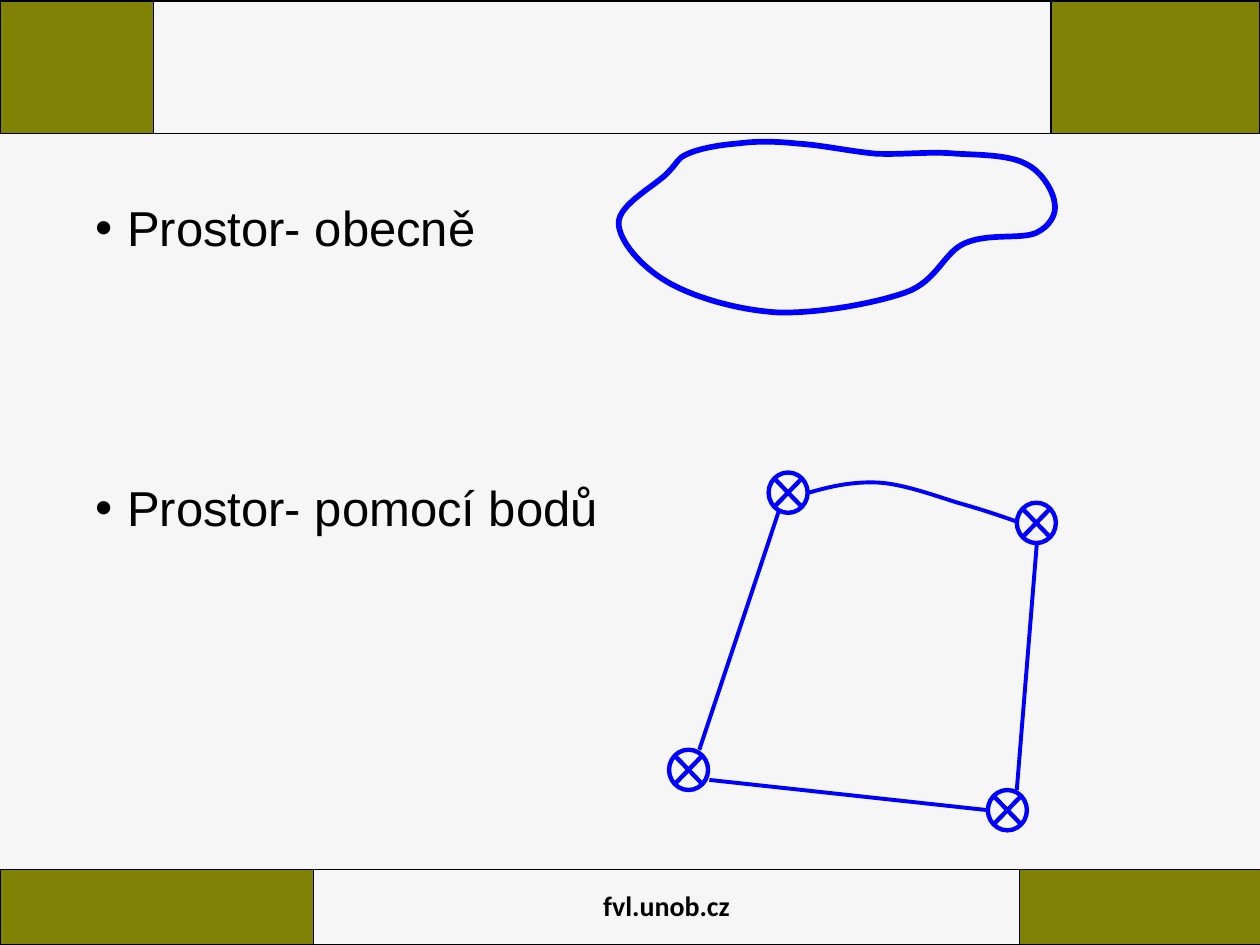
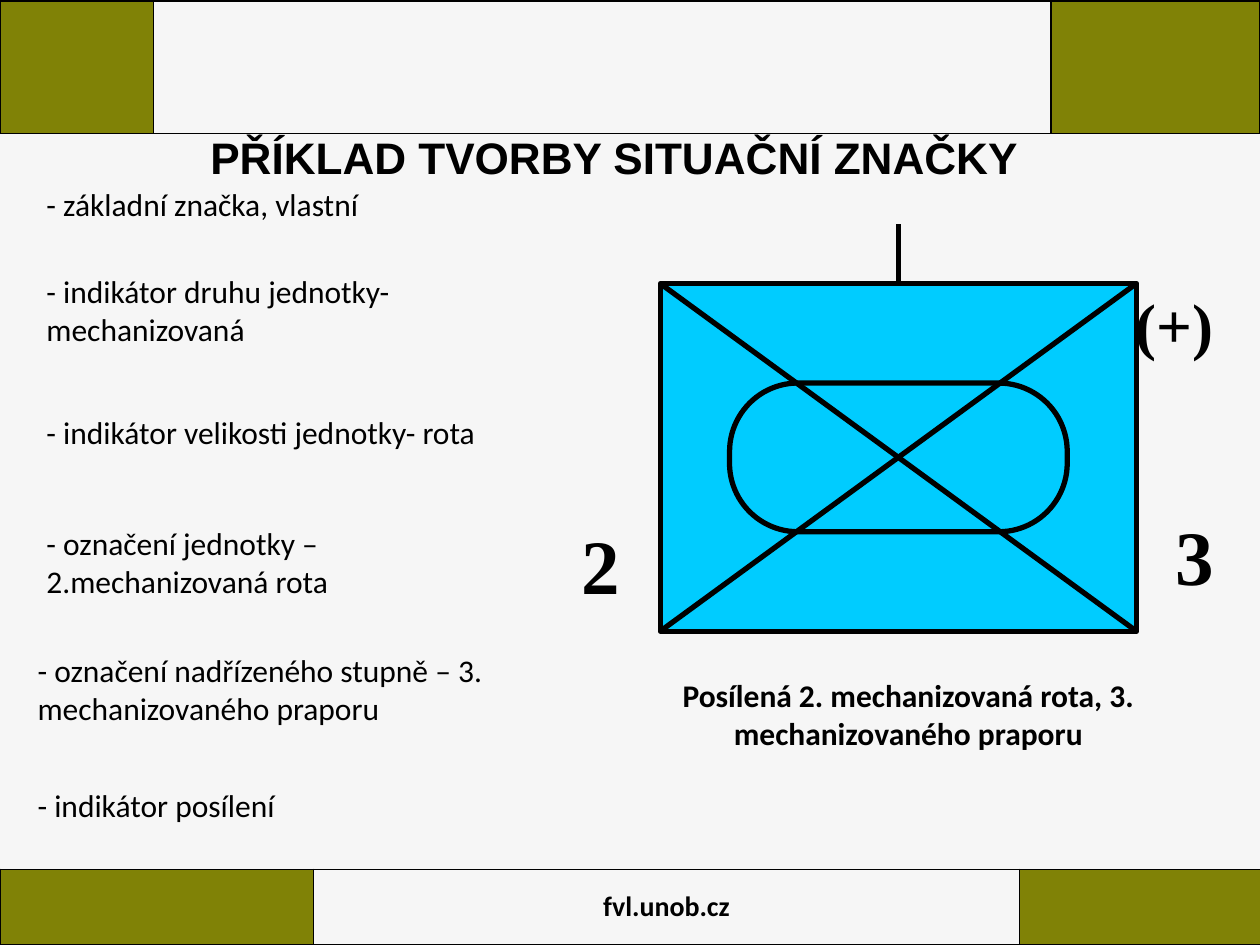
from lxml import etree
from pptx import Presentation
from pptx.dml.color import RGBColor
from pptx.enum.shapes import MSO_CONNECTOR, MSO_SHAPE
from pptx.enum.text import MSO_ANCHOR, MSO_AUTO_SIZE, PP_ALIGN
from pptx.oxml.ns import qn
from pptx.util import Pt

PX = 9144
STRAIGHT = MSO_CONNECTOR.STRAIGHT
RECT, ROUNDED = MSO_SHAPE.RECTANGLE, MSO_SHAPE.ROUNDED_RECTANGLE
JUNCTION = MSO_SHAPE.FLOWCHART_SUMMING_JUNCTION
LEFT, CENTER = PP_ALIGN.LEFT, PP_ALIGN.CENTER
MIDDLE = MSO_ANCHOR.MIDDLE
FIXED = MSO_AUTO_SIZE.NONE

PAPER, OLIVE, BLACK, BLUE, CYAN = "F6F6F6", "808206", "000000", "0000FF", "00CCFF"
SANS, BODY, SERIF = "Arial", "Calibri", "Times New Roman"

AREA = [
    (530, 137), (521, 147), (491, 162), (491, 177), (491, 191), (509, 212), (530, 224),
    (551, 236), (585, 246), (617, 248), (648, 249), (694, 241), (719, 232),
    (744, 223), (749, 200), (766, 193), (784, 185), (810, 190), (822, 185),
    (833, 180), (839, 170), (837, 161), (836, 152), (827, 136), (814, 130),
    (801, 123), (778, 123), (759, 122), (739, 120), (716, 123), (695, 122),
    (674, 120), (651, 115), (633, 114), (614, 112), (600, 112), (585, 114),
    (571, 115), (555, 118), (546, 122), (537, 126), (539, 128), (530, 137),
]
ARC = [
    (642, 391), (659, 386), (677, 382), (697, 383), (716, 384), (741, 393), (760, 399),
    (778, 404), (793, 409), (807, 414),
]
JUNCTIONS = [(610, 375), (807, 399), (531, 595), (784, 627)]
SIDES = [(555, 595, 618, 406), (807, 627, 823, 430), (563, 619, 784, 643)]
NOTES = [
    ("- základní značka, vlastní", (27, 142, 394, 90)),
    ("- indikátor druhu jednotky- mechanizovaná", (27, 211, 378, 130)),
    ("- indikátor velikosti jednotky- rota", (27, 323, 378, 90)),
    ("- označení jednotky – 2.mechanizovaná rota", (27, 411, 378, 90)),
    ("- označení nadřízeného stupně – 3. mechanizovaného praporu", (20, 512, 433, 130)),
    ("- indikátor posílení", (20, 619, 433, 50)),
]
AMPLIFIERS = [
    ("2", (445, 406, 63, 83), 44),
    ("3", (917, 399, 63, 83), 44),
    ("(+)", (889, 222, 87, 70), 36),
]


def emu(*lengths):
    return [n * PX for n in lengths]


def rgb(color):
    return RGBColor.from_string(color)


def set_font(p, size, name, bold=False):
    p.font.size, p.font.name, p.font.bold = Pt(size), name, bold
    p.font.color.rgb = rgb(BLACK)


def set_line(sp, color, width):
    sp.line.color.rgb = rgb(color)
    sp.line.width = Pt(width)


def place(sp, box):
    sp.left, sp.top, sp.width, sp.height = emu(*box)


def add_outline(shapes, kind, box, color, width, fill=None):
    sp = shapes.add_shape(kind, *emu(*box))
    sp.shadow.inherit = False
    if fill:
        sp.fill.solid()
        sp.fill.fore_color.rgb = rgb(fill)
    else:
        sp.fill.background()
    set_line(sp, color, width)
    return sp


def add_line(shapes, ends, color, width):
    line = shapes.add_connector(STRAIGHT, *emu(*ends))
    set_line(line, color, width)
    etree.SubElement(line._element.spPr, qn("a:effectLst"))


def add_curve(shapes, nodes, color, width):
    builder = shapes.build_freeform(*emu(*nodes[0]))
    builder.add_line_segments([emu(*node) for node in nodes[1:]],
                              close=nodes[0] == nodes[-1])
    sp = builder.convert_to_shape()
    segments = list(sp._element.iter(qn("a:lnTo")))
    for i in range(0, len(segments), 3):
        first, *others = segments[i:i + 3]
        curve = etree.Element(qn("a:cubicBezTo"))
        first.addprevious(curve)
        for segment in (first, *others):
            curve.append(segment[0])
            segment.getparent().remove(segment)
    sp.shadow.inherit = False
    sp.fill.background()
    set_line(sp, color, width)


def add_text(shapes, text, box, size, name, bold=False, align=LEFT):
    tf = shapes.add_textbox(*emu(*box)).text_frame
    tf.word_wrap = True
    p = tf.paragraphs[0]
    p.text, p.alignment = text, align
    set_font(p, size, name, bold)


def set_borders(cell):
    tc_pr = cell._tc.get_or_add_tcPr()
    for side in ("lnL", "lnR", "lnT", "lnB"):
        ln = etree.SubElement(tc_pr, qn(f"a:{side}"), w=str(Pt(1)))
        fill = etree.SubElement(ln, qn("a:solidFill"))
        etree.SubElement(fill, qn("a:srgbClr"), val=BLACK)


def add_band(shapes, top, height, widths, text=""):
    frame = shapes.add_table(1, len(widths), *emu(0, top, sum(widths), height))
    table = frame.table
    table.first_row = table.horz_banding = False
    for i, width in enumerate(widths):
        table.columns[i].width = width * PX
        cell = table.cell(0, i)
        set_borders(cell)
        if i == 1:
            cell.fill.background()
        else:
            cell.fill.solid()
            cell.fill.fore_color.rgb = rgb(OLIVE)
    if text:
        cell = table.cell(0, 1)
        cell.vertical_anchor = MIDDLE
        p = cell.text_frame.paragraphs[0]
        p.text, p.alignment = text, CENTER
        set_font(p, 16, BODY, True)
    return frame


def build_master(master, shapes):
    background = master.background.fill
    background.solid()
    background.fore_color.rgb = rgb(PAPER)
    bands = [
        add_band(shapes, 690, 60, (249, 560, 192), "fvl.unob.cz"),
        add_band(shapes, 1, 105, (122, 712, 166)),
    ]
    for number, frame in enumerate(bands, 20):
        frame._element.nvGraphicFramePr.cNvPr.set("id", str(number))
        master.shapes._spTree.append(frame._element)


def fill_bullets(sp, box, items, gap):
    place(sp, box)
    tf = sp.text_frame
    tf.auto_size = FIXED
    for i, item in enumerate(items):
        p = tf.add_paragraph() if i else tf.paragraphs[0]
        p.text = item
        p_pr = p._p.get_or_add_pPr()
        p_pr.set("marL", str(25 * PX))
        p_pr.set("indent", str(-25 * PX))
        p.line_spacing = 0.9
        p.space_before = Pt(gap if i else 0)
        set_font(p, 28, SANS)


def fill_title(sp, box, text):
    place(sp, box)
    tf = sp.text_frame
    tf.auto_size, tf.vertical_anchor = FIXED, MIDDLE
    p = tf.paragraphs[0]
    p.text, p.alignment, p.line_spacing = text, CENTER, 0.9
    set_font(p, 25.2, SANS, True)


def build_areas(s):
    title = s.shapes.title._element
    title.getparent().remove(title)
    fill_bullets(s.placeholders[1], (66, 157, 850, 450),
                 ["Prostor- obecně", "Prostor- pomocí bodů"], 130)
    add_curve(s.shapes, AREA, BLUE, 3.25)
    for x, y in JUNCTIONS:
        add_outline(s.shapes, JUNCTION, (x, y, 31, 32), BLUE, 2.5)
    add_curve(s.shapes, ARC, BLUE, 2.25)
    for ends in SIDES:
        add_line(s.shapes, ends, BLUE, 2.25)


def build_symbol(s):
    fill_title(s.shapes.title, (67, 102, 850, 50), "PŘÍKLAD TVORBY SITUAČNÍ ZNAČKY ")
    left, top, width, height = unit = (524, 225, 378, 276)
    right, bottom, middle = left + width, top + height, left + width // 2
    add_outline(s.shapes, RECT, unit, BLACK, 3, CYAN)
    group = s.shapes.add_group_shape().shapes
    add_line(group, (left, bottom, right, top), BLACK, 3)
    add_line(group, (left, top, right, bottom), BLACK, 3)
    track = add_outline(group, ROUNDED, (579, 304, 268, 118), BLACK, 3)
    track.adjustments[0] = 0.46
    add_line(s.shapes, (middle, top, middle, 178), BLACK, 3)
    for text, box in NOTES:
        add_text(s.shapes, text, box, 18, BODY)
    for text, box, size in AMPLIFIERS:
        add_text(s.shapes, text, box, size, SERIF, True, CENTER)
    add_text(s.shapes, "Posílená 2. mechanizovaná rota, 3. mechanizovaného praporu",
             (469, 532, 504, 130), 18, BODY, True, CENTER)


def main():
    prs = Presentation()
    prs.slide_width, prs.slide_height = emu(1000, 750)
    areas, symbol = [prs.slides.add_slide(prs.slide_layouts[i]) for i in (1, 5)]
    build_master(prs.slide_master, areas.shapes)
    build_areas(areas)
    build_symbol(symbol)
    prs.save("out.pptx")


if __name__ == "__main__":
    main()
